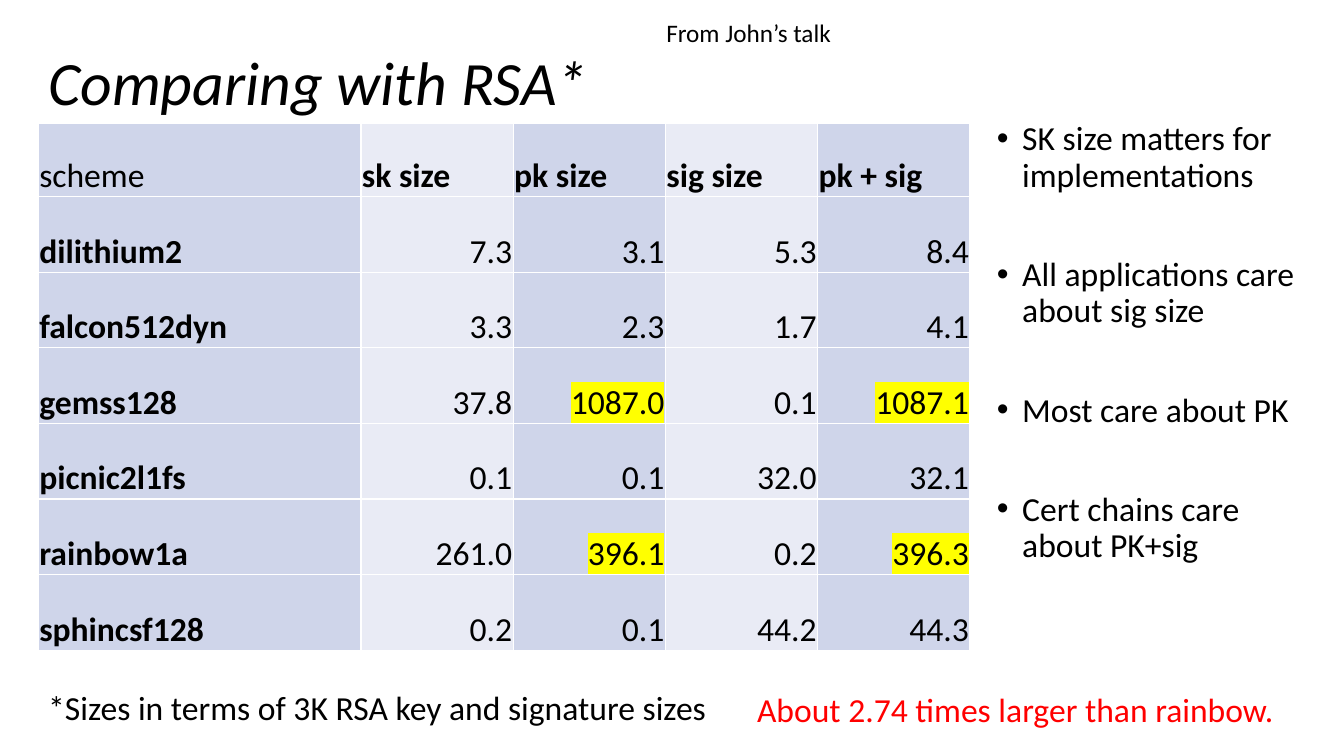
import pptx
import pptx.util
import pptx.dml.color
import pptx.enum.text
import pptx.oxml
import pptx.oxml.ns

PX = 9144
FONT = "Calibri"
COLORS = {"ink": "000000", "red": "FF0000", "dark": "CFD5EA",
          "light": "E9EBF5", "rule": "FFFFFF", "mark": "FFFF00"}
HEAD = ["scheme", "sk size", "pk size", "sig size", "pk + sig"]
ROWS = [
    ["dilithium2", "7.3", "3.1", "5.3", "8.4"],
    ["falcon512dyn", "3.3", "2.3", "1.7", "4.1"],
    ["gemss128", "37.8", "1087.0", "0.1", "1087.1"],
    ["picnic2l1fs", "0.1", "0.1", "32.0", "32.1"],
    ["rainbow1a", "261.0", "396.1", "0.2", "396.3"],
    ["sphincsf128", "0.2", "0.1", "44.2", "44.3"],
]
MARKED = {"1087.0", "1087.1", "396.1", "396.3"}
POINTS = ["SK size matters for implementations",
          "All applications care about sig size",
          "Most care about PK",
          "Cert chains care about PK+sig"]
ALIGN = pptx.enum.text.PP_ALIGN
ANCHOR = pptx.enum.text.MSO_ANCHOR
AUTO = pptx.enum.text.MSO_AUTO_SIZE


def emu(box):
    return [n * PX for n in box]


def rgb(name):
    return pptx.dml.color.RGBColor.from_string(COLORS[name])


def xml(tag, body, attrs=""):
    space = pptx.oxml.ns.nsdecls("a")
    return pptx.oxml.parse_xml(f"<a:{tag} {space} {attrs}>{body}</a:{tag}>")


def paint(name):
    return f'<a:srgbClr val="{COLORS[name]}"/>'


def style(para, size, color="ink", bold=False, italic=False):
    font = para.font
    font.name = FONT
    font.size = pptx.util.Pt(size)
    font.color.rgb = rgb(color)
    font.bold = bold
    font.italic = italic


def add_title(slide, box, text):
    title = slide.shapes.title
    title.left, title.top, title.width, title.height = emu(box)
    frame = title.text_frame
    frame.text = text
    frame.auto_size = AUTO.NONE
    frame.vertical_anchor = ANCHOR.MIDDLE
    para = frame.paragraphs[0]
    para.alignment = ALIGN.LEFT
    para.line_spacing = 0.9
    style(para, 44, italic=True)


def add_note(slide, box, text, size=24, color="ink", wrap=True):
    frame = slide.shapes.add_textbox(*emu(box)).text_frame
    frame.word_wrap = wrap
    frame.text = text
    style(frame.paragraphs[0], size, color)


def add_points(slide, box, points):
    frame = slide.shapes.add_textbox(*emu(box)).text_frame
    frame.word_wrap = True
    for i, text in enumerate(points):
        para = frame.add_paragraph() if i else frame.paragraphs[0]
        para.text = text
        para.line_spacing = 0.9
        para.space_before = pptx.util.Pt(45 if i else 0)
        style(para, 24)
        props = para._p.get_or_add_pPr()
        props.set("marL", str(25 * PX))
        props.set("indent", str(-25 * PX))
        mark = props.find(pptx.oxml.ns.qn("a:defRPr"))
        mark.addprevious(xml("buFont", "", 'typeface="Arial"'))
        mark.addprevious(xml("buChar", "", 'char="•"'))


def fill_cell(cell, text, row, col):
    cell.margin_left = cell.margin_top = cell.margin_right = PX
    cell.margin_bottom = 0
    cell.vertical_anchor = ANCHOR.BOTTOM
    props = cell._tc.get_or_add_tcPr()
    for side in ("lnL", "lnR", "lnT", "lnB"):
        props.append(xml(side, f"<a:solidFill>{paint('rule')}</a:solidFill>", 'w="12700"'))
    cell.fill.solid()
    cell.fill.fore_color.rgb = rgb("light" if col % 2 else "dark")
    cell.text = text
    para = cell.text_frame.paragraphs[0]
    para.alignment = ALIGN.RIGHT if row and col else ALIGN.LEFT
    style(para, 24, bold=(row == 0) != (col == 0))
    if text in MARKED:
        para.runs[0]._r.get_or_add_rPr().append(xml("highlight", paint("mark")))


def add_sizes(slide, box, rows):
    table = slide.shapes.add_table(len(rows), len(rows[0]), *emu(box)).table
    table.first_row = table.horz_banding = False
    for i, col in enumerate(table.columns):
        col.width = (151 if i else 320) * PX
    for i, row in enumerate(table.rows):
        row.height = (75 if i else 73) * PX
    for i, row in enumerate(rows):
        for j, text in enumerate(row):
            fill_cell(table.cell(i, j), text, i, j)


def main():
    deck = pptx.Presentation()
    deck.slide_width, deck.slide_height = emu((1333, 750))
    slide = deck.slides.add_slide(deck.slide_layouts.get_by_name("Title Only"))
    add_title(slide, (38, 12, 1150, 145), "Comparing with RSA*")
    add_points(slide, (979, 116, 316, 667), POINTS)
    add_sizes(slide, (38, 122, 924, 523), [HEAD] + ROWS)
    add_note(slide, (38, 677, 679, 50),
             "*Sizes in terms of 3K RSA key and signature sizes", wrap=False)
    add_note(slide, (651, 12, 482, 71), "From John’s talk", size=18)
    add_note(slide, (741, 679, 555, 50),
             "About 2.74 times larger than rainbow.", color="red")
    deck.save("out.pptx")


if __name__ == "__main__":
    main()
